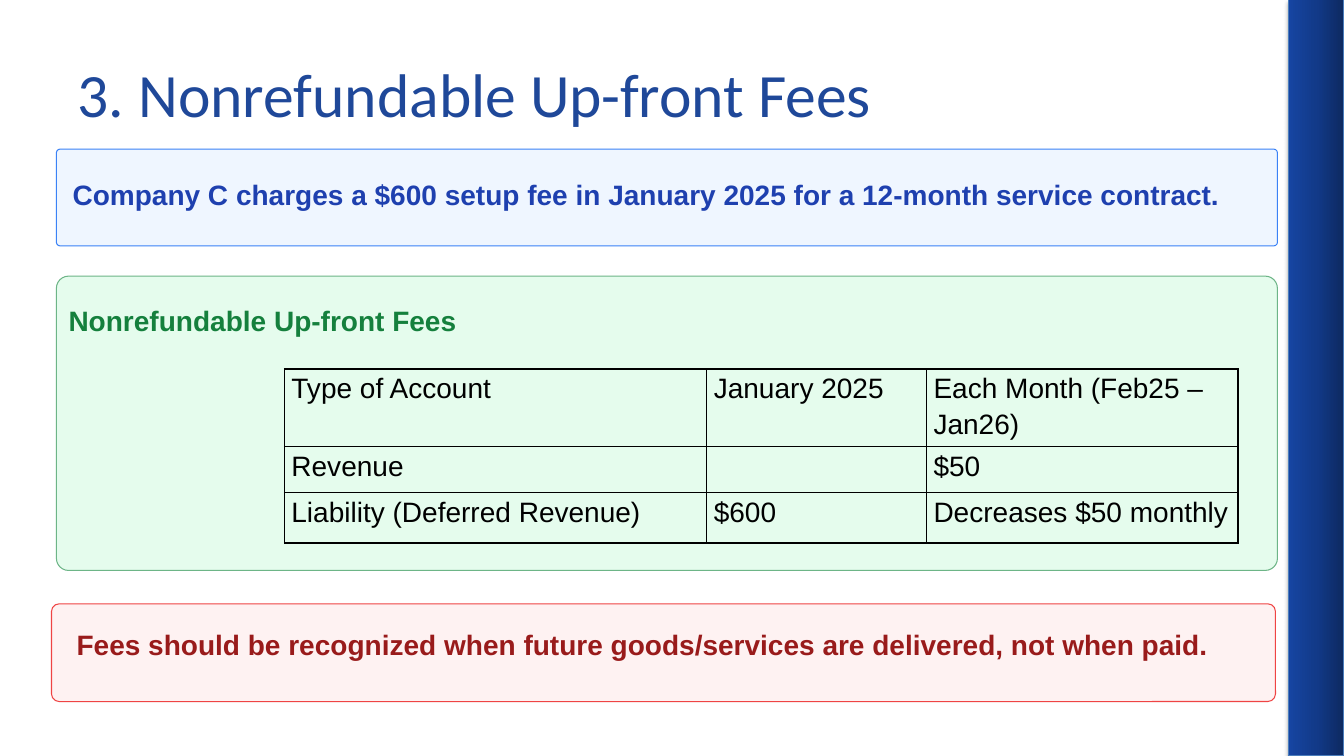
from copy import deepcopy
from dataclasses import dataclass
from typing import Any, NamedTuple

from lxml.etree import SubElement
from pptx import Presentation
from pptx.dml.color import RGBColor
from pptx.enum.shapes import MSO_SHAPE as Shape
from pptx.enum.text import MSO_ANCHOR as Anchor, MSO_AUTO_SIZE as AutoSize, PP_ALIGN as Align
from pptx.oxml.ns import qn
from pptx.util import Emu, Inches, Pt

WIDTH, HEIGHT = Inches(13.33), Inches(7.5)


def across(percent: float) -> Emu:
    """Length as a percentage of the slide width."""
    return Emu(round(WIDTH * percent / 100))


def down(percent: float) -> Emu:
    """Length as a percentage of the slide height."""
    return Emu(round(HEIGHT * percent / 100))


class Area(NamedTuple):
    """Place and size in percent of the slide."""
    left: float
    top: float
    width: float
    height: float

    def lengths(self) -> tuple[Emu, Emu, Emu, Emu]:
        return across(self.left), down(self.top), across(self.width), down(self.height)


@dataclass(frozen=True)
class Theme:
    heading_font: str = "Calibri"
    body_font: str = "Arial"
    heading_size: float = 44
    body_size: float = 20
    line_pitch: float = 22.4
    outline: float = 0.75
    heading: str = "1F4899"
    ink: str = "000000"
    sidebar_line: str = "4B7EBC"
    sidebar_stops: tuple[str, ...] = ("0D2960", "123A89", "1645A2")


@dataclass(frozen=True)
class Panel:
    area: Area
    radius: float
    fill: str
    line: str
    text_area: Area
    text: str
    ink: str


THEME = Theme()
TITLE = "3. Nonrefundable Up-front Fees"
TITLE_AREA = Area(5.03, 4, 90, 16.67)
SIDEBAR_AREA = Area(95.85, 0, 4.15, 100)

PANELS = (
    Panel(Area(4.2, 19.73, 90.85, 12.8), 0.037, "EFF6FF", "3B82F6",
          Area(5.4, 23.73, 88.97, 4.53),
          "Company C charges a $600 setup fee in January 2025 for a 12-month service contract.",
          "1E40AF"),
    Panel(Area(4.2, 36.53, 90.85, 38.93), 0.041, "E5FCED", "6DB587",
          Area(5.1, 40.4, 88.97, 4.53), "Nonrefundable Up-front Fees", "15803D"),
    Panel(Area(3.83, 79.87, 91.07, 12.93), 0.078, "FEF2F2", "EF4444",
          Area(5.7, 83.33, 88.75, 10.67),
          "Fees should be recognized when future goods/services are delivered, not when paid.",
          "991B1B"),
)

TABLE_LEFT, TABLE_TOP = 21.16, 48.8
COLUMNS = (31.43, 16.35, 23.18)
ROWS = (6.27, 6.13, 6.67)
ACCOUNTS = (
    ("Type of Account", "January 2025", "Each Month (Feb25 – Jan26)"),
    ("Revenue", "", "$50"),
    ("Liability (Deferred Revenue)", "$600", "Decreases $50 monthly"),
)


def apply(target: Any, **formats: Any) -> None:
    for name, value in formats.items():
        setattr(target, name, value)


def style_font(font: Any, color: str, size: float = THEME.body_size,
               name: str = THEME.body_font, bold: bool = False) -> None:
    apply(font, name=name, size=Pt(size), bold=bold)
    font.color.rgb = RGBColor.from_string(color)


def add_box(s: Any, kind: Shape, area: Area, line: str) -> Any:
    sp = s.shapes.add_shape(kind, *area.lengths())
    sp.shadow.inherit = False
    sp.line.color.rgb = RGBColor.from_string(line)
    sp.line.width = Pt(THEME.outline)
    return sp


def add_sidebar(s: Any) -> None:
    sp = add_box(s, Shape.RECTANGLE, SIDEBAR_AREA, THEME.sidebar_line)
    sp.fill.gradient()
    sp.fill.gradient_angle = 180
    stop_list = sp._element.spPr.find(f".//{qn('a:gsLst')}")
    stop_list.append(deepcopy(stop_list[-1]))
    last = len(THEME.sidebar_stops) - 1
    for i, (stop, color) in enumerate(zip(sp.fill.gradient_stops, THEME.sidebar_stops)):
        stop.position = i / last
        stop.color.rgb = RGBColor.from_string(color)
    effects = sp._element.spPr.find(qn("a:effectLst"))
    shadow = SubElement(effects, qn("a:outerShdw"), blurRad=str(Pt(3.1)),
                        dist=str(Pt(1.8)), dir="5400000", rotWithShape="0")
    black = SubElement(shadow, qn("a:srgbClr"), val=THEME.ink)
    SubElement(black, qn("a:alpha"), val="35000")


def set_title(s: Any) -> None:
    title = s.shapes.title
    left, top, width, height = TITLE_AREA.lengths()
    apply(title, left=left, top=top, width=width, height=height)
    tf = title.text_frame
    tf.text = TITLE
    apply(tf, vertical_anchor=Anchor.MIDDLE, word_wrap=True, auto_size=AutoSize.NONE)
    p = tf.paragraphs[0]
    p.alignment = Align.LEFT
    style_font(p.runs[0].font, THEME.heading, THEME.heading_size, THEME.heading_font)


def add_panel(s: Any, panel: Panel) -> None:
    sp = add_box(s, Shape.ROUNDED_RECTANGLE, panel.area, panel.line)
    sp.adjustments[0] = panel.radius
    sp.fill.solid()
    sp.fill.fore_color.rgb = RGBColor.from_string(panel.fill)

    tf = s.shapes.add_textbox(*panel.text_area.lengths()).text_frame
    apply(tf, word_wrap=True, margin_left=0, margin_top=0, margin_right=0, margin_bottom=0)
    p = tf.paragraphs[0]
    apply(p, text=panel.text, line_spacing=Pt(THEME.line_pitch), space_after=Pt(8))
    style_font(p.runs[0].font, panel.ink, bold=True)


def add_borders(cell: Any) -> None:
    tc_pr = cell._tc.get_or_add_tcPr()
    for side in ("lnL", "lnR", "lnT", "lnB"):
        line = SubElement(tc_pr, qn(f"a:{side}"), w=str(Pt(1)))
        SubElement(SubElement(line, qn("a:solidFill")), qn("a:srgbClr"), val=THEME.ink)


def add_accounts(s: Any) -> None:
    area = Area(TABLE_LEFT, TABLE_TOP, sum(COLUMNS), sum(ROWS))
    table = s.shapes.add_table(len(ROWS), len(COLUMNS), *area.lengths()).table
    apply(table, first_row=False, horz_banding=False)
    for column, width in zip(table.columns, COLUMNS):
        column.width = across(width)
    for row, height, texts in zip(table.rows, ROWS, ACCOUNTS):
        row.height = down(height)
        for cell, text in zip(row.cells, texts):
            apply(cell, margin_left=Inches(0.07), margin_right=Inches(0.07),
                  margin_top=0, margin_bottom=0)
            add_borders(cell)
            cell.fill.background()
            p = cell.text_frame.paragraphs[0]
            apply(p, text=text, line_spacing=1.15, space_after=Pt(10))
            style_font(p.font, THEME.ink)


def main() -> None:
    prs = Presentation()
    apply(prs, slide_width=WIDTH, slide_height=HEIGHT)
    s = prs.slides.add_slide(prs.slide_layouts[5])
    add_sidebar(s)
    set_title(s)
    for panel in PANELS:
        add_panel(s, panel)
    add_accounts(s)
    prs.save("out.pptx")


if __name__ == "__main__":
    main()
